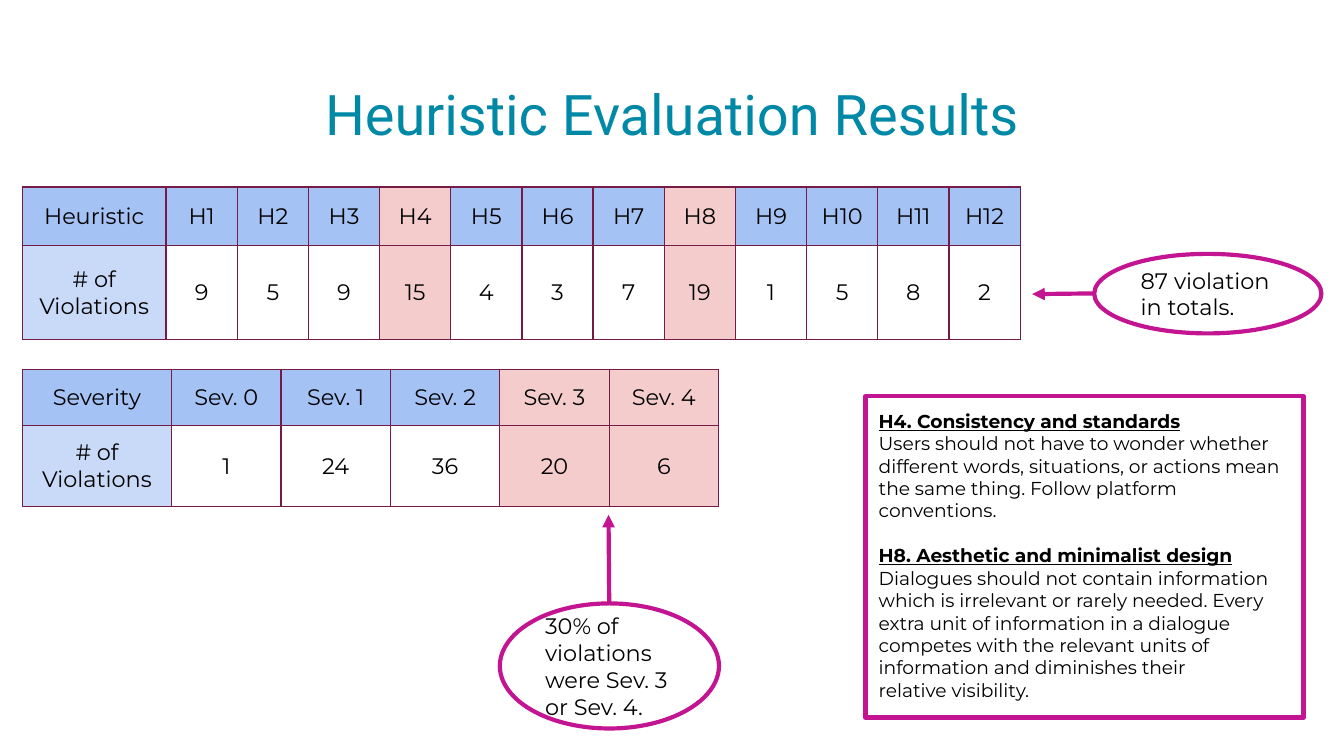
from lxml import etree
from pptx import Presentation
from pptx.dml.color import RGBColor
from pptx.enum.shapes import MSO_CONNECTOR, MSO_SHAPE
from pptx.enum.text import MSO_ANCHOR, PP_ALIGN
from pptx.oxml.ns import qn
from pptx.util import Pt

CENTER, LEFT = PP_ALIGN.CENTER, PP_ALIGN.LEFT
TOP, MIDDLE = MSO_ANCHOR.TOP, MSO_ANCHOR.MIDDLE
OVAL, RECTANGLE = MSO_SHAPE.OVAL, MSO_SHAPE.RECTANGLE
STRAIGHT = MSO_CONNECTOR.STRAIGHT

COLORS = {
    "title": "0089A7",
    "text": "000000",
    "header": "A4C2F4",
    "label": "C9DAF8",
    "highlight": "F4CCCC",
    "border": "741B47",
    "accent": "C31491",
    "white": "FFFFFF",
}


def write_text(frame, lines, size, align=LEFT, color="text", font="Montserrat"):
    """Fill a text frame with one paragraph per line, each a (text, format) pair."""
    frame.word_wrap = True
    for index, (text, text_format) in enumerate(lines):
        paragraph = frame.paragraphs[0] if index == 0 else frame.add_paragraph()
        paragraph.alignment = align
        run = paragraph.add_run()
        run.text = text
        run.font.color.rgb = RGBColor.from_string(COLORS[color])
        for name, value in {"name": font, "size": Pt(size), **text_format}.items():
            setattr(run.font, name, value)


def add_border(cell):
    properties = cell._tc.get_or_add_tcPr()
    for side in ("lnL", "lnR", "lnT", "lnB"):
        line = etree.SubElement(properties, qn(f"a:{side}"), w=str(Pt(0.75)))
        fill = etree.SubElement(line, qn("a:solidFill"))
        etree.SubElement(fill, qn("a:srgbClr"), val=COLORS["border"])


presentation = Presentation()
presentation.slide_width, presentation.slide_height = Pt(720), Pt(405)
slide = presentation.slides.add_slide(presentation.slide_layouts[6])

title = slide.shapes.add_textbox(Pt(24.5), Pt(35.3), Pt(671), Pt(45.4))
title.text_frame.margin_top = title.text_frame.margin_bottom = Pt(7.2)
write_text(title.text_frame, [("Heuristic Evaluation Results", {})], 30,
           CENTER, "title", "Roboto")

# Each table: top, label width, value width, row heights, highlighted columns, rows
tables = [
    (100.2, 77, 38.14, (31.5, 50.3), {4, 8}, [
        ["Heuristic"] + [f"H{number}" for number in range(1, 13)],
        ["# of Violations", 9, 5, 9, 15, 4, 3, 7, 19, 1, 5, 8, 2],
    ]),
    (197.8, 80, 58.6, (30, 43.7), {4, 5}, [
        ["Severity"] + [f"Sev. {level}" for level in range(5)],
        ["# of Violations", 1, 24, 36, 20, 6],
    ]),
]
for top, label_width, value_width, heights, highlighted, rows in tables:
    count = len(rows[0])
    width = label_width + value_width * (count - 1)
    table = slide.shapes.add_table(
        2, count, Pt(12), Pt(top), Pt(width), Pt(sum(heights))).table
    table.first_row = table.horz_banding = False
    for index, column in enumerate(table.columns):
        column.width = Pt(value_width if index else label_width)
    for row_index, values in enumerate(rows):
        table.rows[row_index].height = Pt(heights[row_index])
        for column_index, value in enumerate(values):
            cell = table.cell(row_index, column_index)
            cell.vertical_anchor = MIDDLE
            for side in ("left", "right", "top", "bottom"):
                setattr(cell, f"margin_{side}", Pt(7.2))
            write_text(cell.text_frame, [(str(value), {})], 12, CENTER)
            add_border(cell)
            if column_index in highlighted:
                fill_name = "highlight"
            elif row_index == 0:
                fill_name = "header"
            else:
                fill_name = "white" if column_index else "label"
            cell.fill.solid()
            cell.fill.fore_color.rgb = RGBColor.from_string(COLORS[fill_name])

heading = {"bold": True, "underline": True}
definitions = [
    ("H4. Consistency and standards", heading),
    ("Users should not have to wonder whether different words, situations, or "
     "actions mean the same thing. Follow platform conventions.", {}),
    ("H8. Aesthetic and minimalist design", heading),
    ("Dialogues should not contain information which is irrelevant or rarely "
     "needed. Every extra unit of information in a dialogue competes with the "
     "relevant units of information and diminishes their", {}),
    ("relative visibility.", {}),
]
# Each box: preset, left, top, width, height, anchor, text size, lines
boxes = [
    (OVAL, 267.8, 323.3, 117.4, 67, MIDDLE, 12,
     [("30% of violations were Sev. 3 or Sev. 4.", {})]),
    (RECTANGLE, 463.7, 212.2, 234.7, 172.3, TOP, 10, definitions),
    (OVAL, 586.2, 136, 121.7, 42.6, MIDDLE, 12, [("87 violation in totals.", {})]),
]
for preset, left, top, width, height, anchor, size, lines in boxes:
    shape = slide.shapes.add_shape(preset, Pt(left), Pt(top), Pt(width), Pt(height))
    shape.shadow.inherit = False
    shape.fill.solid()
    shape.fill.fore_color.rgb = RGBColor.from_string(COLORS["white"])
    shape.line.color.rgb = RGBColor.from_string(COLORS["accent"])
    shape.line.width = Pt(2.25)
    frame = shape.text_frame
    frame.vertical_anchor = anchor
    for side in ("left", "right", "top", "bottom"):
        setattr(frame, f"margin_{side}", Pt(7.2))
    write_text(frame, lines, size)
    if lines is definitions:
        frame.paragraphs[2].space_before = Pt(12)

arrows = [(326.4, 323.3, 326, 275.8), (586.2, 157.2, 553, 157.6)]
for points in arrows:
    arrow = slide.shapes.add_connector(STRAIGHT, *map(Pt, points))
    arrow.line.color.rgb = RGBColor.from_string(COLORS["accent"])
    arrow.line.width = Pt(2.25)
    etree.SubElement(arrow.line._get_or_add_ln(), qn("a:tailEnd"), type="triangle")
    etree.SubElement(arrow._element.spPr, qn("a:effectLst"))

presentation.save("out.pptx")
